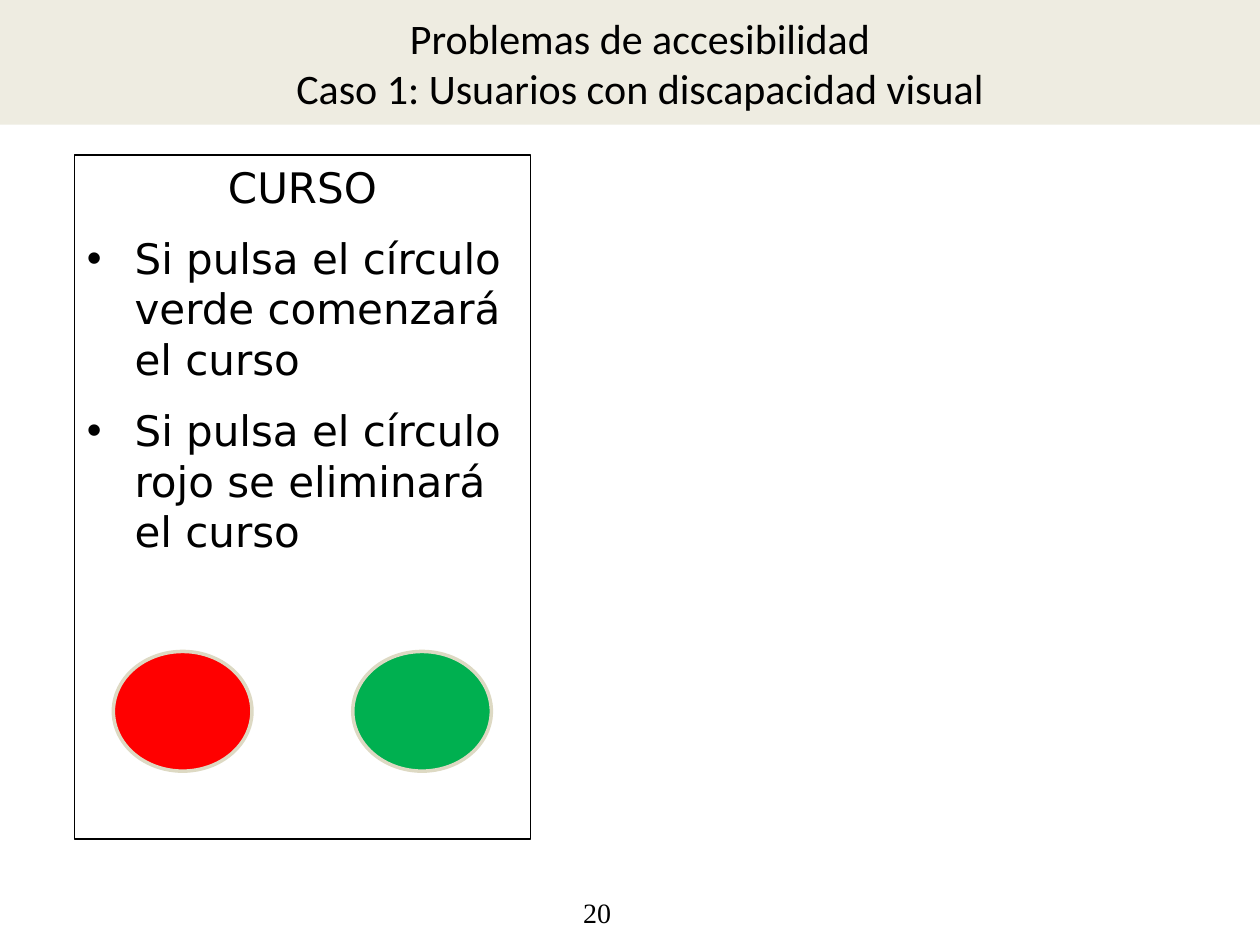
from dataclasses import dataclass

from lxml import etree
from pptx import Presentation
from pptx import util as u
from pptx.dml.color import RGBColor
from pptx.enum import shapes, text
from pptx.oxml import ns

COLORS = {
    "ink": "000000",
    "band": "EEECE1",
    "rim": "DDD9C3",
    "red": "FF0000",
    "green": "00B050",
}
BULLET_INDENT = u.Inches(0.38)


@dataclass
class Box:
    left: float
    top: float
    width: float
    height: float

    def lengths(self) -> list:
        return [u.Inches(v) for v in (self.left, self.top, self.width, self.height)]


@dataclass
class Button:
    left: float
    color: str


def color(name: str) -> RGBColor:
    return RGBColor.from_string(COLORS[name])


def draw_shape(slide, kind, box: Box, fill=None, line=None, line_width=0.75):
    shape = slide.shapes.add_shape(kind, *box.lengths())
    shape.shadow.inherit = False
    if fill:
        shape.fill.solid()
        shape.fill.fore_color.rgb = color(fill)
    else:
        shape.fill.background()
    if line:
        shape.line.color.rgb = color(line)
        shape.line.width = u.Pt(line_width)
    else:
        shape.line.fill.background()
    return shape


def write(paragraph, content: str, *, font: str, size: float = 24,
          align=text.PP_ALIGN.LEFT, before: float = 0, bullet: bool = False) -> None:
    paragraph.text = content
    paragraph.alignment = align
    paragraph.space_before = u.Pt(before)
    if bullet:
        properties = paragraph._p.get_or_add_pPr()
        properties.set("marL", str(BULLET_INDENT))
        properties.set("indent", str(-BULLET_INDENT))
        etree.SubElement(properties, ns.qn("a:buFont")).set("typeface", "Arial")
        etree.SubElement(properties, ns.qn("a:buChar")).set("char", "•")
    for run in paragraph.runs:
        run.font.name = font
        run.font.size = u.Pt(size)
        run.font.color.rgb = color("ink")


def main() -> None:
    prs = Presentation()
    prs.slide_width, prs.slide_height = u.Inches(10), u.Inches(7.5)
    slide = prs.slides.add_slide(prs.slide_layouts[6])

    # Page number
    page_number = slide.shapes.add_textbox(*Box(4.53, 7.06, 0.67, 0.37).lengths())
    page_number.text_frame.word_wrap = True
    write(page_number.text_frame.paragraphs[0], "20", font="Times New Roman", size=16)

    # Title band
    band = draw_shape(slide, shapes.MSO_SHAPE.RECTANGLE, Box(0, 0, 10, 0.99), fill="band")
    title = band.text_frame
    title.margin_left, title.margin_right = u.Inches(0.55), u.Inches(0.39)
    title.vertical_anchor = text.MSO_ANCHOR.MIDDLE
    write(title.paragraphs[0],
          "Problemas de accesibilidad\vCaso 1: Usuarios con discapacidad visual",
          font="Calibri", align=text.PP_ALIGN.CENTER)

    # Course panel with its instructions
    panel = draw_shape(slide, shapes.MSO_SHAPE.RECTANGLE, Box(0.59, 1.23, 3.62, 5.43),
                       line="ink")
    course = panel.text_frame
    course.vertical_anchor = text.MSO_ANCHOR.TOP
    write(course.paragraphs[0], "CURSO", font="DejaVu Sans", align=text.PP_ALIGN.CENTER)
    for instruction in ("Si pulsa el círculo verde comenzará el curso",
                        "Si pulsa el círculo rojo se eliminará el curso"):
        write(course.add_paragraph(), instruction, font="DejaVu Sans",
              before=12, bullet=True)

    # Round buttons
    for button in (Button(0.9, "red"), Button(2.8, "green")):
        draw_shape(slide, shapes.MSO_SHAPE.OVAL, Box(button.left, 5.17, 1.1, 0.95),
                   fill=button.color, line="rim", line_width=2)

    prs.save("out.pptx")


if __name__ == "__main__":
    main()
